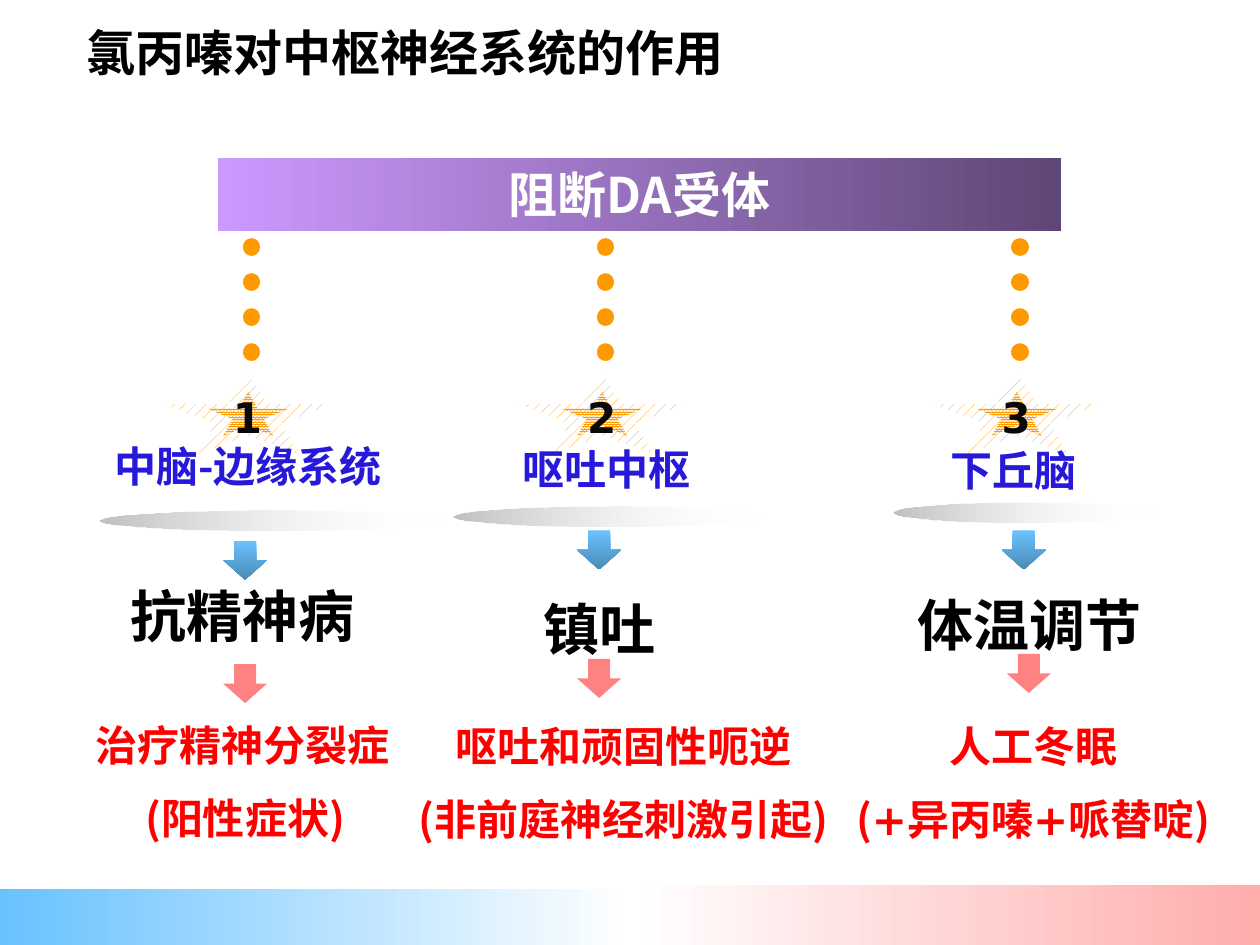
from dataclasses import dataclass

from lxml import etree
from pptx import Presentation
from pptx.dml.color import RGBColor
from pptx.enum.dml import MSO_LINE, MSO_PATTERN
from pptx.enum.shapes import MSO_CONNECTOR, MSO_SHAPE
from pptx.enum.text import MSO_ANCHOR, MSO_AUTO_SIZE, PP_ALIGN
from pptx.oxml.ns import qn
from pptx.util import Inches, Pt

RECT, OVAL = MSO_SHAPE.RECTANGLE, MSO_SHAPE.OVAL
STAR, DOWN_ARROW = MSO_SHAPE.STAR_5_POINT, MSO_SHAPE.DOWN_ARROW
LEFT, CENTER = PP_ALIGN.LEFT, PP_ALIGN.CENTER
SPARSE, DENSE = MSO_PATTERN.PERCENT_20, MSO_PATTERN.PERCENT_90
SANS, HAN = "DejaVu Sans", "Noto Sans CJK SC"
ORANGE, WHITE, BLACK = "FF9900", "FFFFFF", "000000"
COLUMNS, ROWS = 100, 75
CELL = Inches(10) // COLUMNS


@dataclass
class Branch:
    number: str
    marker: tuple
    site: str
    site_font: str
    site_box: tuple
    site_spacing: float
    plate: tuple
    arrow: tuple
    effect: str
    effect_box: tuple
    effect_spacing: float
    use_arrow: tuple
    use: str
    detail: tuple
    use_box: tuple
    align: int


BRANCHES = [
    Branch("1", (13, 19.6, 13.4, 16.5),
           "中脑-边缘系统", HAN, (6.3, 35.6, 26.8, 4.1), 0.7,
           (7.9, 40.5, 27.6, 1.6), (17.7, 42.9),
           "抗精神病", (9.4, 45.7, 20.1, 6.3), 1, (17.7, 52.7),
           "治疗精神分裂症", (("(", HAN), ("阳性症状", SANS), (")", HAN)),
           (6.6, 56.6, 25.7, 11.1), LEFT),
    Branch("2", (41.1, 19.6, 13.4, 16.5),
           "呕吐中枢", SANS, (39.5, 34.7, 17.3, 5), 1,
           (36, 40.2, 24.8, 1.6), (45.8, 42.1),
           "镇吐", (37.7, 44, 19.7, 9), 1.5, (45.8, 52.3),
           "呕吐和顽固性呃逆", (("(非前庭神经刺激引起)", HAN),),
           (31.5, 56.7, 35.9, 11.1), CENTER),
    Branch("3", (74, 19.6, 13.4, 16.5),
           "下丘脑", SANS, (74.2, 34.8, 12.5, 5), 1,
           (70.9, 39.9, 20.9, 1.6), (79.5, 42.1),
           "体温调节", (69.3, 43.7, 24.8, 9), 1.5, (79.9, 51.9),
           "人工冬眠", (("(", HAN), ("+异丙嗪+哌替啶", SANS), (")", HAN)),
           (66.2, 56.7, 31.6, 11.1), CENTER),
]


def color(value):
    return RGBColor.from_string(value)


def cells(box):
    return [round(value * CELL) for value in box]


def add_shape(page, kind, box):
    shape = page.shapes.add_shape(kind, *cells(box))
    shape.shadow.inherit = False
    shape.line.fill.background()
    return shape


def solid(shape, value):
    shape.fill.solid()
    shape.fill.fore_color.rgb = color(value)


def gradient(shape, start, end, angle=0, fade=False):
    shape.fill.gradient()
    shape.fill.gradient_angle = angle
    stops = shape.fill.gradient_stops
    for stop, value, position in zip(stops, (start, end), (0, 1)):
        stop.color.rgb = color(value)
        stop.position = position
    if fade:
        last = list(shape._element.spPr.iter(qn("a:srgbClr")))[-1]
        etree.SubElement(last, qn("a:alpha")).set("val", "0")


def pattern(shape, kind):
    shape.fill.patterned()
    shape.fill.pattern = kind
    shape.fill.fore_color.rgb = color(ORANGE)
    shape.fill.back_color.rgb = color(WHITE)


def write(para, spans, size, value, align=CENTER):
    para.alignment = align
    for text, font in spans:
        span = para.add_run()
        span.text = text
        span.font.name = font
        span.font.size = Pt(size)
        span.font.bold = True
        span.font.color.rgb = color(value)
        east_asian = etree.SubElement(span._r.get_or_add_rPr(), qn("a:ea"))
        east_asian.set("typeface", font)


def add_text(page, box, text, font, size, value, align=CENTER, spacing=1):
    frame = page.shapes.add_textbox(*cells(box)).text_frame
    frame.word_wrap = True
    para = frame.paragraphs[0]
    write(para, [(text, font)], size, value, align)
    if spacing != 1:
        para.line_spacing = spacing
    return frame


def add_footer_band(page):
    gradient(add_shape(page, RECT, (0, 70.6, 50, 4.4)), "69C2FF", WHITE)
    gradient(add_shape(page, RECT, (50, 70.2, 50, 4.8)), WHITE, "FFADAD")


def add_title(page, box):
    title = page.shapes.title
    title.left, title.top, title.width, title.height = cells(box)
    frame = title.text_frame
    frame.auto_size = MSO_AUTO_SIZE.NONE
    frame.vertical_anchor = MSO_ANCHOR.MIDDLE
    write(frame.paragraphs[0], [("氯丙嗪对中枢神经系统的作用", HAN)], 28, BLACK, LEFT)


def add_banner(page, box):
    banner = add_shape(page, RECT, box)
    gradient(banner, "CC99FF", "5E4776")
    frame = banner.text_frame
    frame.word_wrap = False
    frame.vertical_anchor = MSO_ANCHOR.MIDDLE
    write(frame.paragraphs[0], [("阻断DA受体", HAN)], 28, WHITE)


def add_marker(page, box, number):
    left, top, width, height = box
    pattern(add_shape(page, STAR, (left, top + 10, width, 6.5)), SPARSE)
    pattern(add_shape(page, STAR, (left + 3.5, top + 11.5, 6.4, 3.5)), DENSE)
    middle = left + width / 2 + 0.25
    ends = cells((middle, top, middle, top + 10.3))
    dots = page.shapes.add_connector(MSO_CONNECTOR.STRAIGHT, *ends)
    dots.line.color.rgb = color(ORANGE)
    dots.line.width = Pt(10)
    dots.line.dash_style = MSO_LINE.ROUND_DOT
    dots.line._get_or_add_ln().set("cap", "rnd")
    etree.SubElement(dots._element.spPr, qn("a:effectLst"))
    add_text(page, (left + 4.1, top + 11, 5.1, 5), number, SANS, 24, "080808")


def add_branch(page, branch):
    add_marker(page, branch.marker, branch.number)
    gradient(add_shape(page, OVAL, branch.plate), "C0C0C0", WHITE, fade=True)
    add_text(page, branch.site_box, branch.site, branch.site_font, 24, "2719D9",
             spacing=branch.site_spacing)
    arrow = add_shape(page, DOWN_ARROW, (*branch.arrow, 3.5, 3.1))
    gradient(arrow, "69C2FF", "4B8BB6", 270)
    add_text(page, branch.effect_box, branch.effect, SANS, 32, BLACK,
             branch.align, branch.effect_spacing)
    solid(add_shape(page, DOWN_ARROW, (*branch.use_arrow, 3.5, 3.1)), "FF8282")
    frame = add_text(page, branch.use_box, branch.use, SANS, 24, "FF0000", branch.align)
    para = frame.add_paragraph()
    para.space_before = Pt(13)
    write(para, branch.detail, 24, "FF0000")


def main():
    deck = Presentation()
    deck.slide_width, deck.slide_height = COLUMNS * CELL, ROWS * CELL
    page = deck.slides.add_slide(deck.slide_layouts[5])
    add_footer_band(page)
    add_title(page, (5.9, 1, 54.7, 6.2))
    add_banner(page, (17.3, 12.5, 66.9, 5.8))
    for branch in BRANCHES:
        add_branch(page, branch)
    deck.save("out.pptx")


if __name__ == "__main__":
    main()
